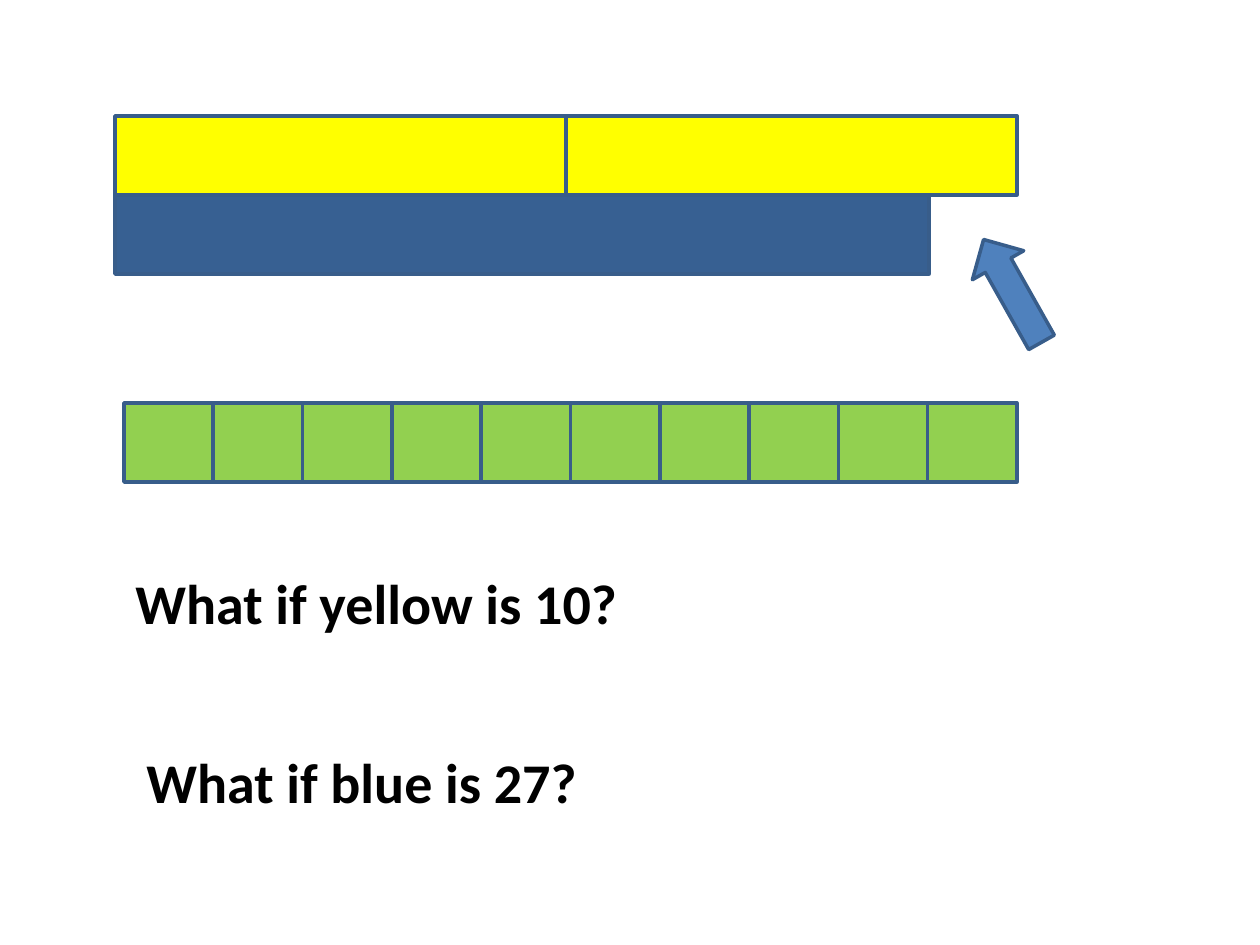
import pptx
import pptx.util
import pptx.dml.color
import pptx.enum.shapes
import pptx.enum.text

PX_PER_INCH = 126
COLORS = {
    "yellow": "FFFF00",
    "blue": "376092",
    "green": "92D050",
    "arrow": "4F81BD",
    "outline": "385D8A",
    "text": "000000",
}
SHAPE = pptx.enum.shapes.MSO_SHAPE


def px(n):
    return pptx.util.Emu(round(n * 914400 / PX_PER_INCH))


def rgb(name):
    return pptx.dml.color.RGBColor.from_string(COLORS[name])


class Deck:
    """Holds the style and the current slide."""

    font = "Calibri"
    size = 32
    line_width = 2

    def __init__(self, width, height):
        self.prs = pptx.Presentation()
        self.prs.slide_width, self.prs.slide_height = px(width), px(height)
        self.s = self.prs.slides.add_slide(self.prs.slide_layouts[6])

    def group(self):
        return self.s.shapes.add_group_shape().shapes

    def shape(self, x, y, w, h, fill, kind=SHAPE.RECTANGLE, shapes=None, rotation=0):
        shapes = self.s.shapes if shapes is None else shapes
        sp = shapes.add_shape(kind, px(x), px(y), px(w), px(h))
        sp.shadow.inherit = False
        sp.fill.solid()
        sp.fill.fore_color.rgb = rgb(fill)
        sp.line.color.rgb = rgb("outline")
        sp.line.width = pptx.util.Pt(self.line_width)
        sp.rotation = rotation

    def text(self, x, y, w, h, words):
        tf = self.s.shapes.add_textbox(px(x), px(y), px(w), px(h)).text_frame
        tf.word_wrap = False
        tf.auto_size = pptx.enum.text.MSO_AUTO_SIZE.SHAPE_TO_FIT_TEXT
        tf.text = words
        r = tf.paragraphs[0].runs[0]
        r.font.name = self.font
        r.font.size = pptx.util.Pt(self.size)
        r.font.bold = True
        r.font.color.rgb = rgb("text")


def main():
    deck = Deck(1260, 945)
    bar_h = 79

    # Two yellow bars above one blue bar
    left, top, yellow_w = 115, 116, 451
    bars = deck.group()
    deck.shape(left, top + bar_h, 814, bar_h, "blue", shapes=bars)
    for i in range(2):
        deck.shape(left + i * yellow_w, top, yellow_w, bar_h, "yellow", shapes=bars)

    # Arrow to the gap beside the blue bar
    deck.shape(983, 232, 59, 118, "arrow", SHAPE.DOWN_ARROW, rotation=150.6)

    # Row of ten green units
    row_left, row_w, units = 124, 893, 10
    unit_w = row_w / units
    for i in range(units):
        deck.shape(row_left + i * unit_w, 403, unit_w, bar_h, "green")

    # Questions
    deck.text(123, 562, 512, 81, "What if yellow is 10?")
    deck.text(134, 741, 460, 81, "What if blue is 27?")

    deck.prs.save("out.pptx")


if __name__ == "__main__":
    main()
